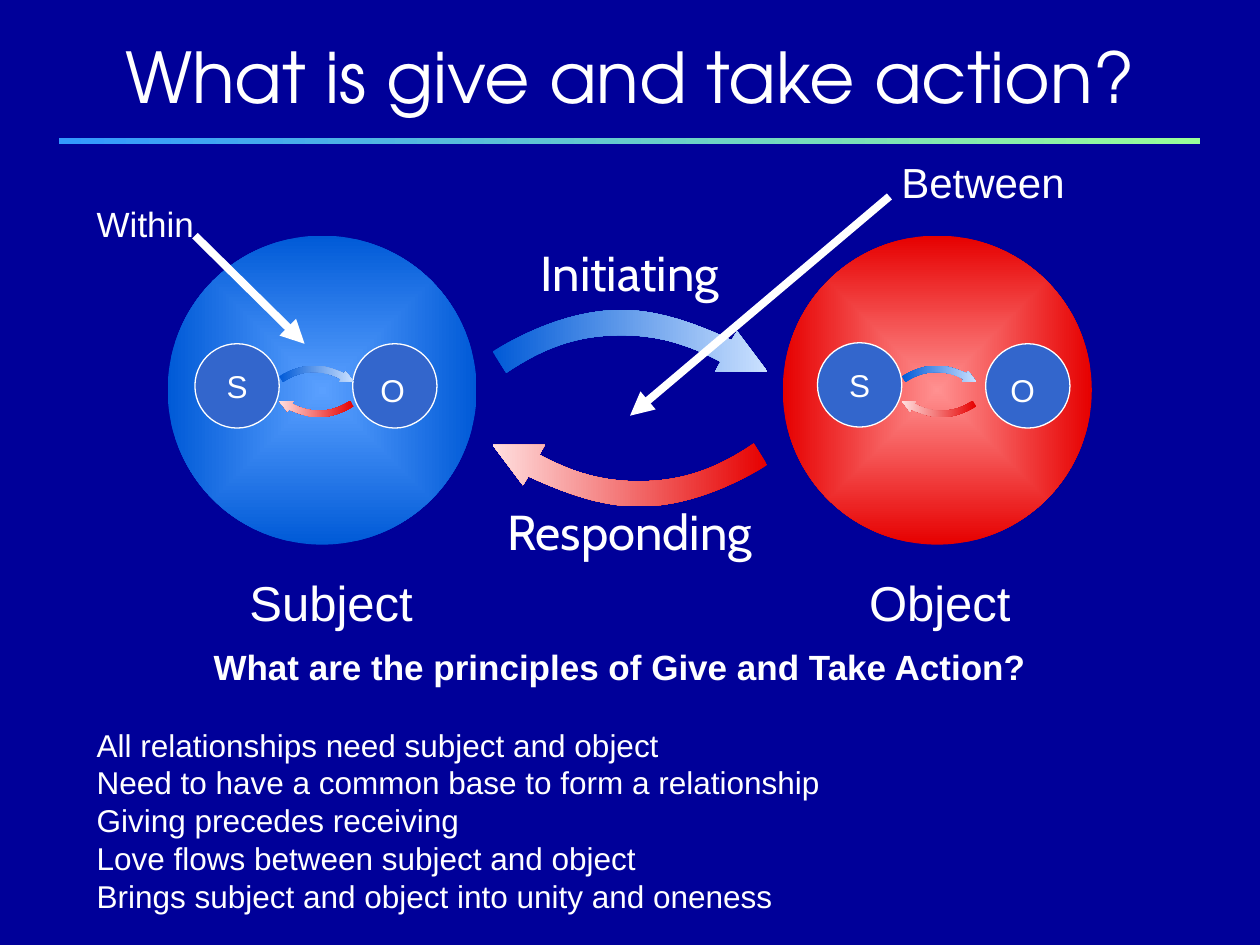
from lxml import etree
from pptx import Presentation
from pptx.dml.color import RGBColor
from pptx.enum.shapes import MSO_CONNECTOR, MSO_SHAPE
from pptx.enum.text import MSO_ANCHOR, MSO_AUTO_SIZE, PP_ALIGN
from pptx.oxml import parse_xml
from pptx.oxml.ns import qn
from pptx.util import Cm, Pt

LEFT, CENTER = PP_ALIGN.LEFT, PP_ALIGN.CENTER
MIDDLE, TOP = MSO_ANCHOR.MIDDLE, MSO_ANCHOR.TOP
FIT, NO_FIT = MSO_AUTO_SIZE.SHAPE_TO_FIT_TEXT, MSO_AUTO_SIZE.NONE
OVAL, RECTANGLE = MSO_SHAPE.OVAL, MSO_SHAPE.RECTANGLE
STRAIGHT = MSO_CONNECTOR.STRAIGHT
NAVY, WHITE, INNER_BLUE = "000099", "FFFFFF", "3366CC"
GIVE, TAKE = ("005AD7", "CBE1FF"), ("E60000", "FFDFDF")

TITLE = "What is give and take action?"
QUESTION = "What are the principles of Give and Take Action?"
PRINCIPLES = [
    "All relationships need subject and object",
    "Need to have a common base to form a relationship",
    "Giving precedes receiving",
    "Love flows between subject and object",
    "Brings subject and object into unity and oneness",
]
PARTNERS = [
    (3.38, ("5AA0FF", "005AD7")),
    (15.78, ("FF9191", "E60000")),
]
INNER_CIRCLES = [
    (3.93, 6.93, "S"),
    (7.11, 6.93, ""),
    (16.48, 6.91, "S"),
    (19.87, 6.93, ""),
]
EXCHANGES = [
    (9.93, 6.25, 8.94, 5.54, 1.27),
    (18.18, 7.37, 8.08, 1.5, 0.33),
    (5.63, 7.37, 8.08, 1.5, 0.33),
]
LABELS = [
    ("Initiating", (9.34, 4.76, 6.71, 1.45), dict(size=28, font="Cabin", align=CENTER)),
    ("Responding", (9.34, 9.98, 6.71, 1.45), dict(size=28, font="Cabin", align=CENTER)),
    ("Subject", (4.78, 11.42, 3.81, 1.45), dict(size=28, wrap=False)),
    ("Object", (17.27, 11.42, 3.35, 1.45), dict(size=28, wrap=False)),
    ("O", (7.42, 7.36, 0.51, 1.02), dict(size=18)),
    ("O", (20.12, 7.36, 0.51, 1.02), dict(size=18)),
    ("Within", (1.7, 3.96, 2.5, 1.09), dict(size=20, wrap=False)),
    ("Between", (17.92, 3.04, 3.81, 1.27), dict(size=24, wrap=False)),
]
POINTERS = [(3.93, 4.75, 6.14, 6.93), (17.93, 3.96, 12.7, 8.38)]

ARROW_START = (0, 0.66)
ARROW_SEGMENTS = [
    [(0.16, 0.24), (0.32, 0), (0.47, 0)],
    [(0.62, 0), (0.77, 0.28), (0.87, 0.48)],
    [(0.89, 0.34)],
    [(1, 0.98)],
    [(0.81, 0.98)],
    [(0.83, 0.82)],
    [(0.71, 0.54), (0.6, 0.4), (0.47, 0.4)],
    [(0.34, 0.4), (0.21, 0.52), (0.05, 1)],
]


def color(value):
    return RGBColor.from_string(value)


def lengths(*values):
    return [Cm(value) for value in values]


def write(shape, text, size, font="Arial", align=LEFT, anchor=TOP, wrap=True,
          fit=FIT, bold=False, before=0, append=False):
    frame = shape.text_frame
    frame.word_wrap, frame.auto_size, frame.vertical_anchor = wrap, fit, anchor
    paragraph = frame.add_paragraph() if append else frame.paragraphs[0]
    paragraph.alignment, paragraph.space_before = align, Pt(before)
    run = paragraph.add_run()
    run.text = text
    run.font.name, run.font.size, run.font.bold = font, Pt(size), bold
    run.font.color.rgb = color(WHITE)


def paint(shape, fill, outline=None, radial=False):
    shape.shadow.inherit = False
    if isinstance(fill, str):
        shape.fill.solid()
        shape.fill.fore_color.rgb = color(fill)
    else:
        shape.fill.gradient()
        shape.fill.gradient_angle = 0
        for stop, position, value in zip(shape.fill.gradient_stops, (0, 1), fill):
            stop.position, stop.color.rgb = position, color(value)
    if radial:
        direction = shape._element.spPr.find(qn("a:gradFill")).find(qn("a:lin"))
        direction.getparent().replace(direction, parse_xml(
            '<a:path xmlns:a="http://schemas.openxmlformats.org/drawingml/2006/main" '
            'path="shape"><a:fillToRect l="50000" t="50000" r="50000" b="50000"/></a:path>'))
    if outline:
        shape.line.color.rgb = color(outline)
        shape.line.width = Pt(0.75)
    else:
        shape.line.fill.background()


def bend_segments(arrow):
    edges = list(arrow._element.spPr.iter(qn("a:lnTo")))
    for segment in ARROW_SEGMENTS:
        segment_edges, edges = edges[:len(segment)], edges[len(segment):]
        if len(segment) == 3:
            curve = etree.Element(qn("a:cubicBezTo"))
            segment_edges[0].addprevious(curve)
            for edge in segment_edges:
                curve.append(edge[0])
                edge.getparent().remove(edge)


def add_curved_arrow(shapes, left, top, width, height, fill, rotation):
    outline = [ARROW_START, *(point for segment in ARROW_SEGMENTS for point in segment)]
    points = [lengths(left + x * width, top + y * height) for x, y in outline]
    builder = shapes.build_freeform(*points[0])
    builder.add_line_segments(points[1:], close=True)
    arrow = builder.convert_to_shape()
    bend_segments(arrow)
    paint(arrow, fill)
    arrow.rotation = rotation


def add_pointer(shapes, ends):
    pointer = shapes.add_connector(STRAIGHT, *lengths(*ends))
    pointer.line.color.rgb = color(WHITE)
    pointer.line.width = Pt(4.5)
    etree.SubElement(pointer.line._get_or_add_ln(), qn("a:tailEnd"), type="triangle")
    etree.SubElement(pointer._element.spPr, qn("a:effectLst"))


def main():
    deck = Presentation()
    deck.slide_width, deck.slide_height = lengths(25.4, 19.05)
    slide = deck.slides.add_slide(deck.slide_layouts[5])
    slide.background.fill.solid()
    slide.background.fill.fore_color.rgb = color(NAVY)
    shapes = slide.shapes

    title = shapes.title
    title.left, title.top, title.width, title.height = lengths(0, 0, 25.4, 3.03)
    write(title, TITLE, 40, font="TeX Gyre Adventor", align=CENTER, anchor=MIDDLE, fit=NO_FIT)
    rule = shapes.add_shape(RECTANGLE, *lengths(1.19, 2.78, 23.01, 0.12))
    paint(rule, ("3399FF", "99FF99"))

    for left, fill in PARTNERS:
        partner = shapes.add_shape(OVAL, *lengths(left, 4.75, 6.23, 6.23))
        paint(partner, fill, radial=True)

    principles = shapes.add_textbox(*lengths(1.7, 12.88, 21.59, 5.69))
    write(principles, QUESTION, 20, align=CENTER, bold=True)
    for index, principle in enumerate(PRINCIPLES):
        write(principles, principle, 18, before=0 if index else 22, append=True)

    for left, top, letter in INNER_CIRCLES:
        circle = shapes.add_shape(OVAL, *lengths(left, top, 1.7, 1.7))
        paint(circle, INNER_BLUE, outline=WHITE)
        if letter:
            write(circle, letter, 18, align=CENTER, anchor=MIDDLE, wrap=False, fit=NO_FIT)

    for left, give_top, take_top, width, height in EXCHANGES:
        exchange = shapes.add_group_shape().shapes
        add_curved_arrow(exchange, left, give_top, width, height, GIVE, 0)
        add_curved_arrow(exchange, left, take_top, width, height, TAKE, 180)

    for text, box, style in LABELS:
        write(shapes.add_textbox(*lengths(*box)), text, **style)
    for ends in POINTERS:
        add_pointer(shapes, ends)

    deck.save("out.pptx")


if __name__ == "__main__":
    main()
